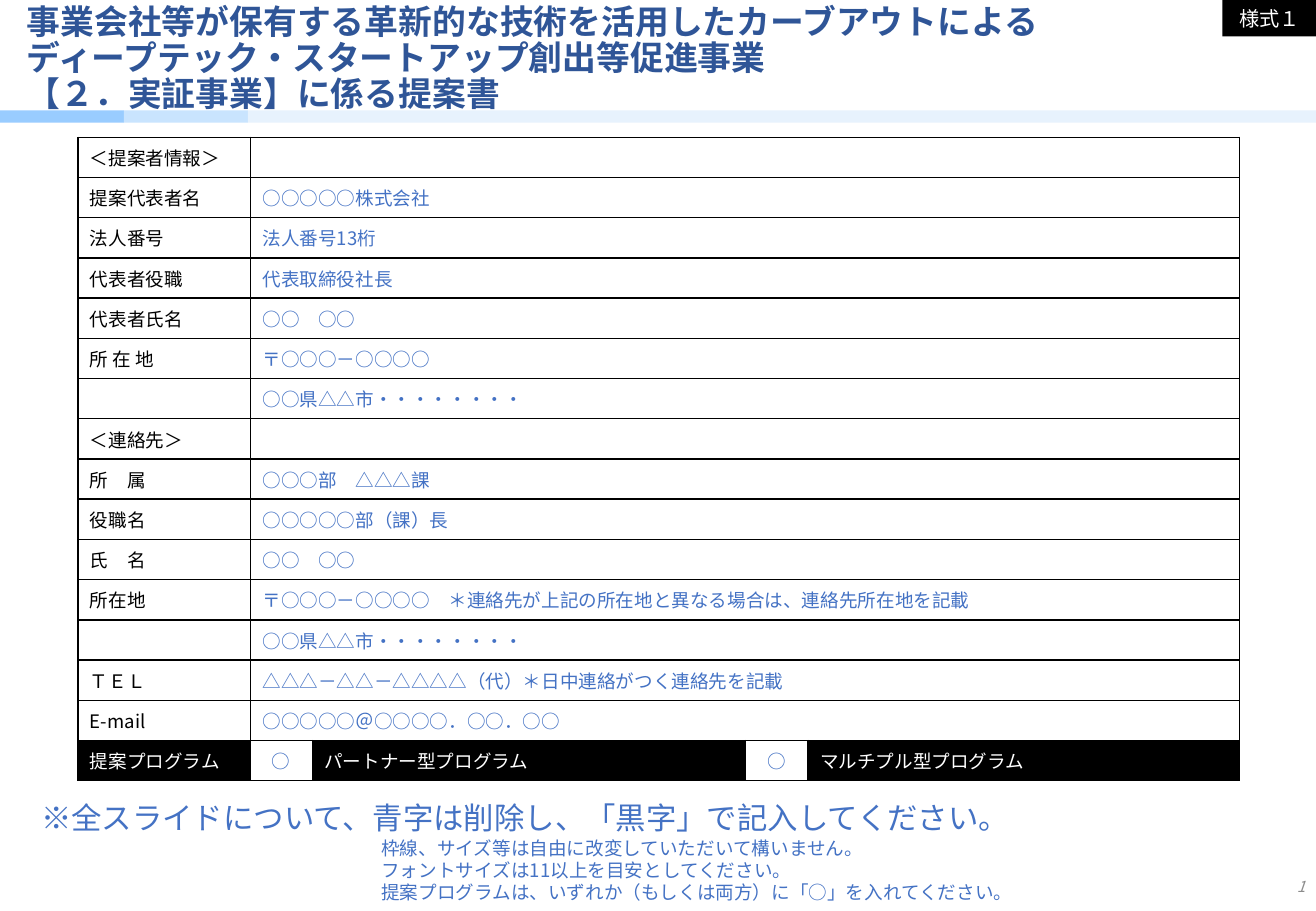
from dataclasses import dataclass

from lxml import etree
from pptx import Presentation
from pptx import util as u
from pptx.dml.color import RGBColor
from pptx.enum import shapes, text
from pptx.oxml.ns import qn

PX = 9144  # 100 px to the inch


def px(length: int) -> u.Emu:
    return u.Emu(length * PX)


@dataclass(frozen=True)
class Theme:
    font: str = "Noto Sans CJK JP"
    title: str = "2F5597"
    sample: str = "4472C4"
    black: str = "000000"
    white: str = "FFFFFF"
    grey: str = "8C8C8C"
    title_size: int = 20
    notice_size: int = 18
    tag_size: int = 12
    body_size: int = 11
    number_size: int = 9


@dataclass(frozen=True)
class Box:
    left: int
    top: int
    width: int
    height: int

    def emu(self) -> tuple[u.Emu, ...]:
        return px(self.left), px(self.top), px(self.width), px(self.height)


@dataclass(frozen=True)
class Band:
    box: Box
    colour: str


@dataclass(frozen=True)
class Note:
    box: Box
    lines: tuple[str, ...]
    size: int


@dataclass(frozen=True)
class Entry:
    label: str
    sample: str = ""


THEME = Theme()
LEFT, CENTRE, RIGHT = text.PP_ALIGN.LEFT, text.PP_ALIGN.CENTER, text.PP_ALIGN.RIGHT

BANDS = (
    Band(Box(0, 91, 102, 10), "99CCFF"),
    Band(Box(102, 91, 102, 10), "C9E4FE"),
    Band(Box(204, 91, 879, 10), "E7F2FD"),
)
ENTRIES = (
    Entry("＜提案者情報＞"),
    Entry("提案代表者名", "○○○○○株式会社"),
    Entry("法人番号", "法人番号13桁"),
    Entry("代表者役職", "代表取締役社長"),
    Entry("代表者氏名", "○○　○○"),
    Entry("所 在 地", "〒○○○－○○○○"),
    Entry("", "○○県△△市・・・・・・・・"),
    Entry("＜連絡先＞"),
    Entry("所　属", "○○○部　△△△課"),
    Entry("役職名", "○○○○○部（課）長"),
    Entry("氏　名", "○○　○○"),
    Entry("所在地", "〒○○○－○○○○　＊連絡先が上記の所在地と異なる場合は、連絡先所在地を記載"),
    Entry("", "○○県△△市・・・・・・・・"),
    Entry("ＴＥＬ", "△△△－△△－△△△△（代）＊日中連絡がつく連絡先を記載"),
    Entry("E-mail", "○○○○○＠○○○○．○○．○○"),
)
PROGRAMS = ("提案プログラム", "○", "パートナー型プログラム", "○", "マルチプル型プログラム")
TABLE_BOX = Box(64, 113, 956, 530)
COLUMNS = (142, 51, 356, 52, 355)
NOTES = (
    Note(Box(304, 684, 542, 66), (
        "枠線、サイズ等は自由に改変していただいて構いません。",
        "フォントサイズは11以上を目安としてください。",
        "提案プログラムは、いずれか（もしくは両方）に「○」を入れてください。",
    ), THEME.body_size),
    Note(Box(24, 653, 846, 40),
         ("※全スライドについて、青字は削除し、「黒字」で記入してください。",), THEME.notice_size),
)


def style(paragraph, size: int, colour: str, align=LEFT, bold=False, italic=False) -> None:
    paragraph.alignment = align
    font = paragraph.font
    font.size, font.bold, font.italic = u.Pt(size), bold, italic
    font.color.rgb = RGBColor.from_string(colour)
    font.name = THEME.font
    defaults = paragraph._p.get_or_add_pPr().find(qn("a:defRPr"))
    etree.SubElement(defaults, qn("a:ea"), typeface=THEME.font)


def add_rect(slide, box: Box, colour: str):
    rect = slide.shapes.add_shape(shapes.MSO_SHAPE.RECTANGLE, *box.emu())
    rect.shadow.inherit = False
    rect.fill.solid()
    rect.fill.fore_color.rgb = RGBColor.from_string(colour)
    rect.line.fill.background()
    return rect


def add_title(slide, box: Box) -> None:
    title = slide.shapes.title
    title.left, title.top, title.width, title.height = box.emu()
    frame = title.text_frame
    frame.word_wrap = True
    frame.auto_size = text.MSO_AUTO_SIZE.NONE
    frame.vertical_anchor = text.MSO_ANCHOR.MIDDLE
    frame.text = ("事業会社等が保有する革新的な技術を活用したカーブアウトによる"
                  "ディープテック・スタートアップ創出等促進事業\v【２．実証事業】に係る提案書")
    heading = frame.paragraphs[0]
    heading.line_spacing = 0.9
    style(heading, THEME.title_size, THEME.title, bold=True)


def add_page_number(slide, box: Box) -> None:
    frame = slide.shapes.add_textbox(*box.emu()).text_frame
    frame.word_wrap = True
    frame.vertical_anchor = text.MSO_ANCHOR.MIDDLE
    number = frame.paragraphs[0]
    style(number, THEME.number_size, THEME.grey, RIGHT, italic=True)
    field = etree.SubElement(number._p, qn("a:fld"), type="slidenum",
                             id="{B6F15528-21DE-4FAA-801E-634DDDAF4B2B}")
    etree.SubElement(field, qn("a:rPr"), lang="ja-JP")
    etree.SubElement(field, qn("a:t")).text = "1"


def add_tag(slide, box: Box, words: str) -> None:
    frame = add_rect(slide, box, THEME.black).text_frame
    frame.text = words
    style(frame.paragraphs[0], THEME.tag_size, THEME.white, CENTRE)


def add_note(slide, note: Note) -> None:
    frame = slide.shapes.add_textbox(*note.box.emu()).text_frame
    frame.word_wrap = True
    frame.auto_size = text.MSO_AUTO_SIZE.SHAPE_TO_FIT_TEXT
    frame.text = "\n".join(note.lines)
    for paragraph in frame.paragraphs:
        style(paragraph, note.size, THEME.sample)


def border(cell) -> None:
    properties = cell._tc.get_or_add_tcPr()
    for place, side in enumerate(("a:lnL", "a:lnR", "a:lnT", "a:lnB")):
        line = etree.Element(qn(side), w=str(u.Pt(1)))
        fill = etree.SubElement(line, qn("a:solidFill"))
        etree.SubElement(fill, qn("a:srgbClr"), val=THEME.black)
        properties.insert(place, line)


def fill_cell(cell, words: str, colour: str, align=LEFT) -> None:
    cell.text = words
    cell.vertical_anchor = text.MSO_ANCHOR.MIDDLE
    style(cell.text_frame.paragraphs[0], THEME.body_size, colour, align)


def add_form(slide) -> None:
    row_count = len(ENTRIES) + 1
    form = slide.shapes.add_table(row_count, len(COLUMNS), *TABLE_BOX.emu()).table
    form.first_row = form.horz_banding = False
    for column, width in zip(form.columns, COLUMNS):
        column.width = px(width)
    for row in form.rows:
        row.height = u.Emu(px(TABLE_BOX.height) // row_count)
    for cell in form.iter_cells():
        cell.fill.background()
        border(cell)

    # Applicant and contact rows
    for index, entry in enumerate(ENTRIES):
        form.cell(index, 1).merge(form.cell(index, len(COLUMNS) - 1))
        fill_cell(form.cell(index, 0), entry.label, THEME.black)
        fill_cell(form.cell(index, 1), entry.sample, THEME.sample)

    # Program choice row: black labels, open answer cells
    for index, words in enumerate(PROGRAMS):
        cell = form.cell(row_count - 1, index)
        if index % 2:
            fill_cell(cell, words, THEME.sample, CENTRE)
        else:
            fill_cell(cell, words, THEME.white)
            cell.fill.solid()
            cell.fill.fore_color.rgb = RGBColor.from_string(THEME.black)


def main() -> None:
    deck = Presentation()
    deck.slide_width, deck.slide_height = px(1083), px(750)
    slide = deck.slides.add_slide(deck.slide_layouts[5])
    # Header
    for band in BANDS:
        add_rect(slide, band.box, band.colour)
    add_title(slide, Box(12, 11, 921, 76))
    add_page_number(slide, Box(985, 710, 99, 40))
    add_tag(slide, Box(1006, 0, 78, 30), "様式１")
    # Form and instructions
    add_form(slide)
    for note in NOTES:
        add_note(slide, note)
    deck.save("out.pptx")


if __name__ == "__main__":
    main()
